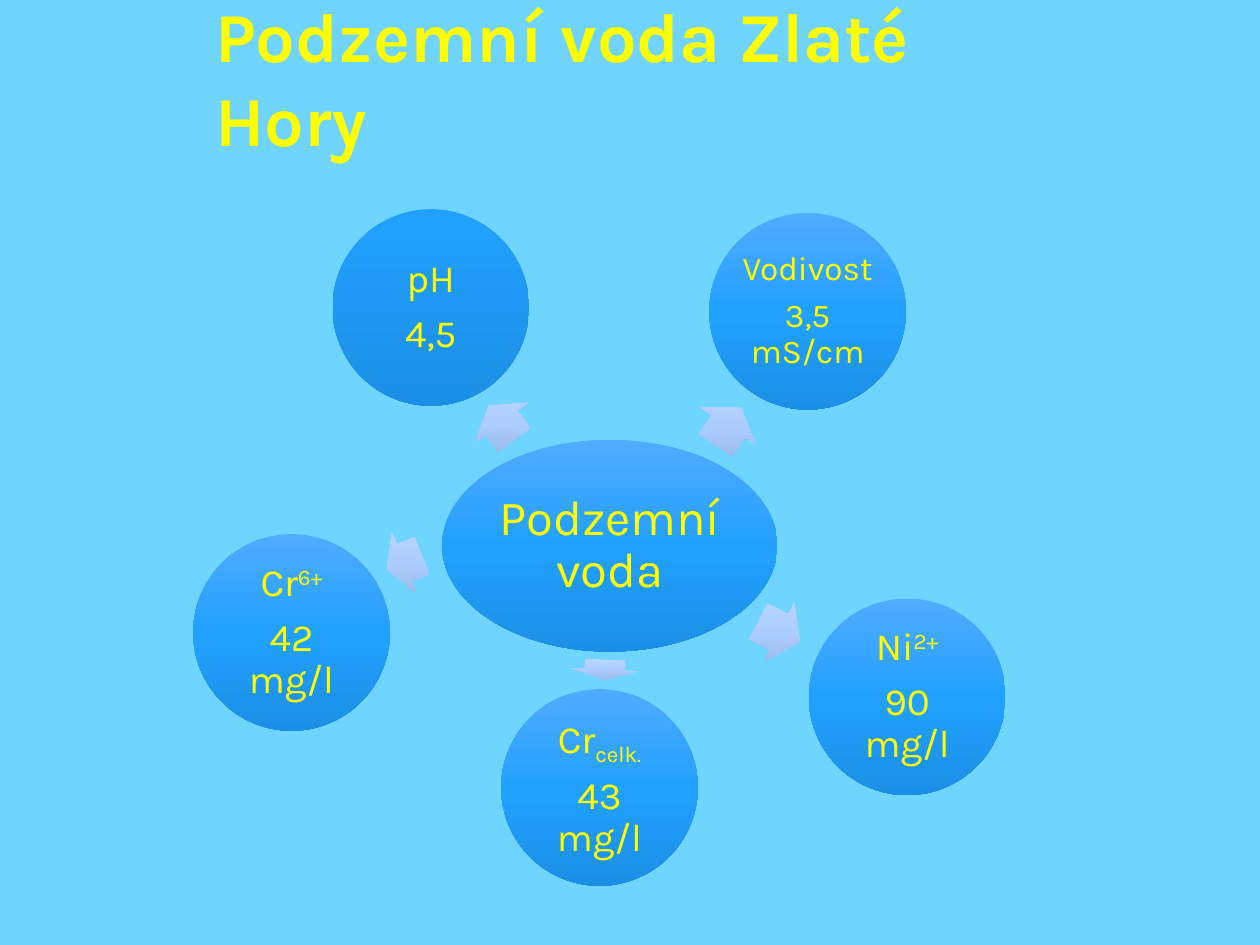
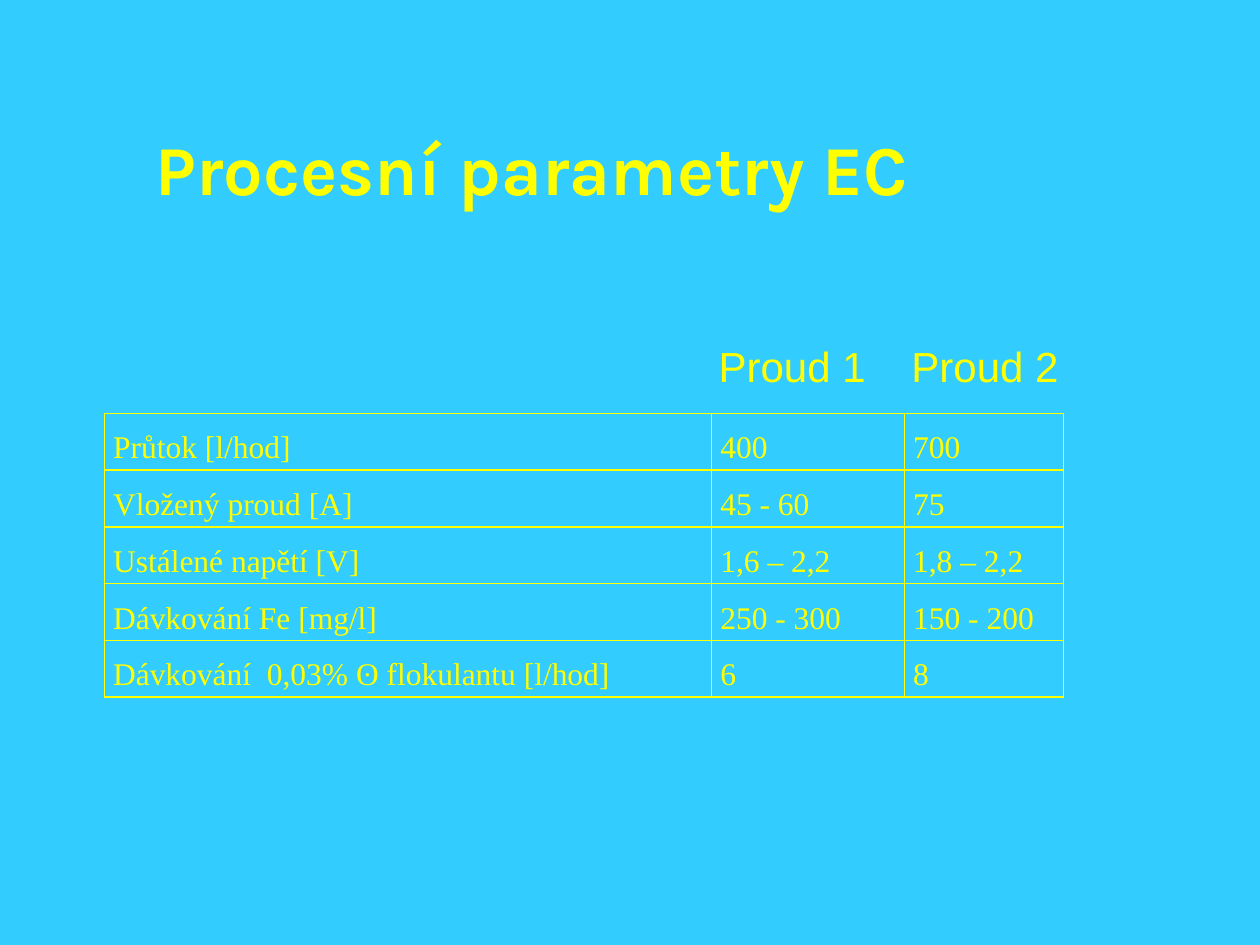
from copy import deepcopy
from dataclasses import dataclass

from lxml.etree import SubElement
from pptx import Presentation
from pptx.dml.color import RGBColor as RGB
from pptx.enum.shapes import MSO_SHAPE as SHAPE
from pptx.enum.text import MSO_ANCHOR as ANCHOR, PP_ALIGN as ALIGN
from pptx.oxml.ns import qn
from pptx.util import Pt


@dataclass(frozen=True)
class Theme:
    text: str = "FFFF00"
    water_bg: str = "6FD4FE"
    process_bg: str = "33CCFF"
    bubble: tuple = ((0, "51ABFF"), (0.5, "21A1FF"), (1, "1B8FE5"))
    bubble_first: tuple = ((0, "21A1FF"), (1, "1B8FE5"))
    arrow: tuple = ((0, "BAD6FF"), (0.5, "ACCDFF"), (1, "97B6E5"))
    display_font: str = "Karla"
    label_font: str = "Arial"
    table_font: str = "Times New Roman"
    title_size: int = 40
    hub_size: int = 28
    label_size: int = 24
    node_size: int = 22
    long_node_size: int = 19
    table_size: int = 18


T = Theme()
NODE_DIAMETER = 112.3
ARROW_WIDTH = 38.2
CELL_INSET = 5.04
SUPERSCRIPT, SUBSCRIPT = 30000, -25000

# name, suffix, baseline, value, size, fill, node centre, arrow centre, length, angle
NODES = [
    ("pH", "", 0, "4,5", T.node_size, T.bubble_first,
     (136.2, 56.7), (176.6, 122.6), 24.5, 232.9),
    ("Vodivost", "", 0, "3,5 mS/cm", T.long_node_size, T.bubble,
     (351.5, 58.9), (306.2, 124.7), 25.9, 304.1),
    ("Ni", "2+", SUPERSCRIPT, "90 mg/l", T.node_size, T.bubble,
     (408.4, 279.2), (335.3, 242.1), 26.6, 27),
    ("Cr", "celk.", SUBSCRIPT, "43 mg/l", T.node_size, T.bubble,
     (232.6, 331), (235.6, 263.7), 11.5, 92.6),
    ("Cr", "6+", SUPERSCRIPT, "42 mg/l", T.node_size, T.bubble,
     (56.6, 242.4), (121.1, 202.5), 21.6, 158.2),
]

PARAMETERS = [
    ("Průtok [l/hod]", "400", "700"),
    ("Vložený proud [A]", "45 - 60", "75"),
    ("Ustálené napětí [V]", "1,6 – 2,2", "1,8 – 2,2"),
    ("Dávkování Fe [mg/l]", "250 - 300", "150 - 200"),
    ("Dávkování  0,03% ʘ flokulantu [l/hod]", "6", "8"),
]


def style_runs(p, font, size, bold=False):
    for r in p.runs:
        r.font.name = font
        r.font.size = Pt(size)
        r.font.bold = bold
        r.font.color.rgb = RGB.from_string(T.text)


def set_insets(tf, left, top, right, bottom):
    tf.margin_left, tf.margin_top = Pt(left), Pt(top)
    tf.margin_right, tf.margin_bottom = Pt(right), Pt(bottom)


def add_slide(prs, background):
    s = prs.slides.add_slide(prs.slide_layouts[6])
    s.background.fill.solid()
    s.background.fill.fore_color.rgb = RGB.from_string(background)
    return s


def add_title(s, text, box):
    tf = s.shapes.add_textbox(*map(Pt, box)).text_frame
    tf.word_wrap = True
    tf.vertical_anchor = ANCHOR.MIDDLE
    tf.text = text
    style_runs(tf.paragraphs[0], T.display_font, T.title_size, True)


def fill_gradient(sp, stops):
    sp.fill.gradient()
    sp.fill.gradient_angle = 270
    grad = sp._element.spPr.find(qn("a:gradFill"))
    grad.set("rotWithShape", "0")
    gs_list = grad.find(qn("a:gsLst"))
    for _ in stops[2:]:
        gs_list.append(deepcopy(gs_list[0]))
    for stop, (position, color) in zip(sp.fill.gradient_stops, stops):
        stop.position = position
        stop.color.rgb = RGB.from_string(color)


def add_centred(s, kind, centre, width, height, stops):
    x, y = centre
    sp = s.shapes.add_shape(kind, Pt(x - width / 2), Pt(y - height / 2), Pt(width), Pt(height))
    sp.shadow.inherit = False
    sp.line.fill.background()
    fill_gradient(sp, stops)
    return sp


def add_bubble(s, centre, width, height, stops, lines, size, inset):
    sp = add_centred(s, SHAPE.OVAL, centre, width, height, stops)
    tf = sp.text_frame
    tf.word_wrap = True
    tf.vertical_anchor = ANCHOR.MIDDLE
    set_insets(tf, *[inset] * 4)
    tf.text = "\n".join(lines)
    for p in tf.paragraphs:
        p.alignment = ALIGN.CENTER
        p.line_spacing = 0.9
        p.space_after = Pt(0.35 * size)
        style_runs(p, T.display_font, size)
    return tf


def add_water_diagram(s, box):
    left, top, width, height = box

    def place(point):
        return left + point[0], top + point[1]

    add_bubble(s, place((238.5, 192.8)), 191.5, 121, T.bubble,
               ["Podzemní voda"], T.hub_size, 2.8)
    for name, suffix, baseline, value, size, stops, centre, tip, length, angle in NODES:
        arrow = add_centred(s, SHAPE.RIGHT_ARROW, place(tip), length, ARROW_WIDTH, T.arrow)
        arrow.adjustments[0], arrow.adjustments[1] = 0.6, 0.5
        arrow.rotation = angle
        tf = add_bubble(s, place(centre), NODE_DIAMETER, NODE_DIAMETER, stops,
                        [name, value], size, 2.2)
        if suffix:
            p = tf.paragraphs[0]
            r = p.add_run()
            r.text = suffix
            style_runs(p, T.display_font, size)
            r.font._element.set("baseline", str(baseline))


def set_borders(cell):
    tc_pr = cell._tc.get_or_add_tcPr()
    for i, side in enumerate(("lnL", "lnR", "lnT", "lnB")):
        ln = SubElement(tc_pr, qn(f"a:{side}"), w=str(Pt(1)))
        fill = SubElement(ln, qn("a:solidFill"))
        SubElement(fill, qn("a:srgbClr"), val=T.text)
        tc_pr.insert(i, ln)


def add_parameter_table(s, box, col_widths):
    rows = len(PARAMETERS)
    table = s.shapes.add_table(rows, len(col_widths), *map(Pt, box)).table
    table.first_row = table.horz_banding = False
    for column, width in zip(table.columns, col_widths):
        column.width = Pt(width)
    for i, values in enumerate(PARAMETERS):
        table.rows[i].height = Pt(box[3] / rows)
        for j, value in enumerate(values):
            cell = table.cell(i, j)
            cell.fill.background()
            set_borders(cell)
            set_insets(cell, CELL_INSET, 0, CELL_INSET, 0)
            cell.text_frame.text = value
            p = cell.text_frame.paragraphs[0]
            p.alignment = ALIGN.JUSTIFY
            p.line_spacing = 1.5
            style_runs(p, T.table_font, T.table_size)


def add_stream_labels(s, box, tab):
    tf = s.shapes.add_textbox(*map(Pt, box)).text_frame
    tf.word_wrap = True
    set_insets(tf, CELL_INSET - 1, 3.6, 0, 3.6)
    tf.text = "Proud 1\tProud 2"
    p = tf.paragraphs[0]
    tabs = SubElement(p._p.get_or_add_pPr(), qn("a:tabLst"))
    SubElement(tabs, qn("a:tab"), pos=str(Pt(tab)), algn="l")
    style_runs(p, T.label_font, T.label_size)


def add_process_parameters(s, box):
    left, top, width, height = box
    col_widths = (347, 110.2, 90.8)
    label_height = 36
    table_top = 45.4
    add_parameter_table(s, (left, top + table_top, width, height - table_top), col_widths)
    add_stream_labels(s, (left + col_widths[0], top, width - col_widths[0] + 10, label_height),
                      col_widths[1])


def main():
    prs = Presentation()
    prs.slide_width, prs.slide_height = Pt(720), Pt(540)

    s = add_slide(prs, T.water_bg)
    add_title(s, "Podzemní voda Zlaté Hory", (116, 8, 505, 71))
    add_water_diagram(s, (110, 119, 465, 388))

    s = add_slide(prs, T.process_bg)
    add_title(s, "Procesní parametry EC", (82, 60, 471, 71))
    add_process_parameters(s, (59.6, 190.8, 548, 188))

    prs.save("out.pptx")


if __name__ == "__main__":
    main()
